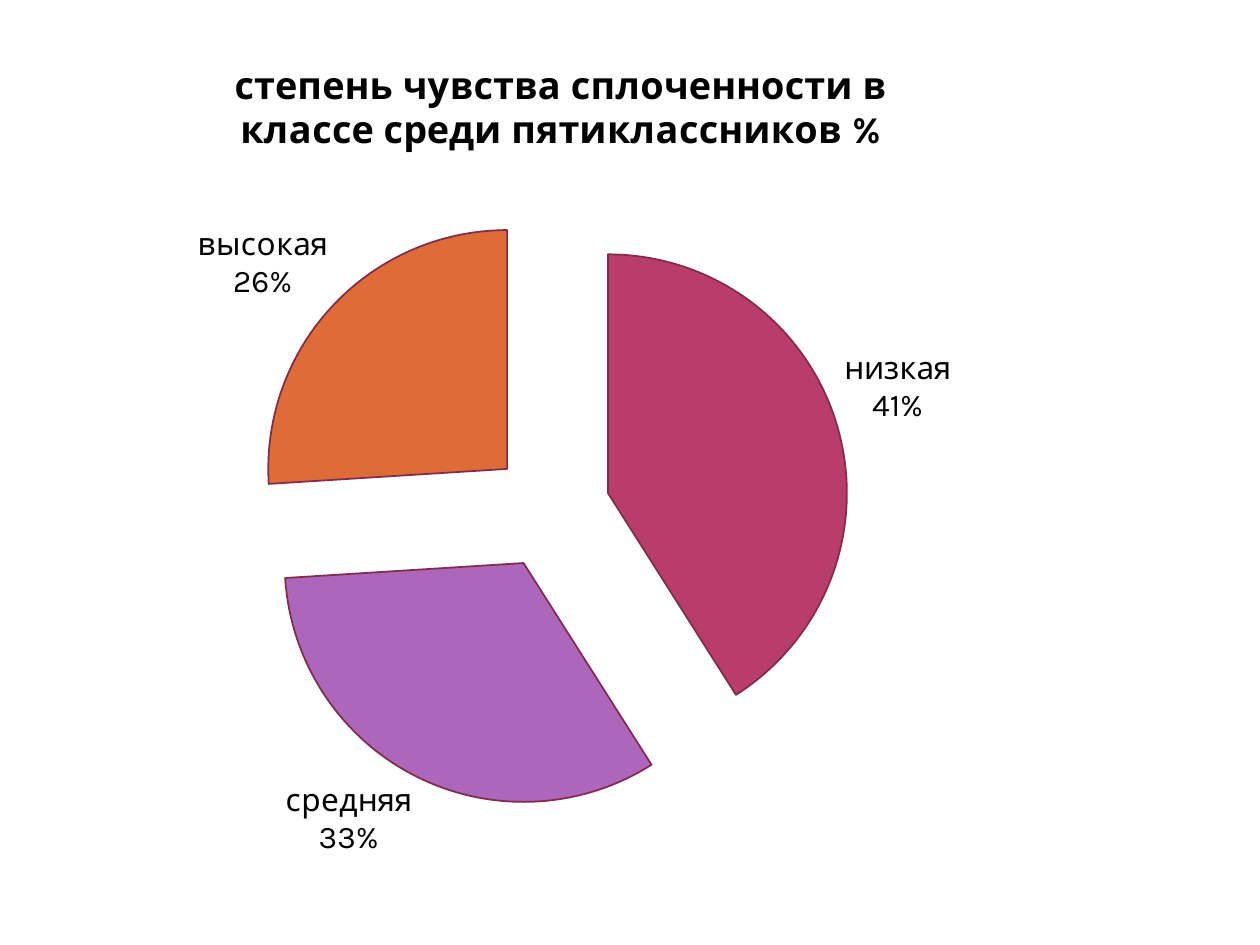
from lxml import etree
from pptx import Presentation
from pptx import util as u
from pptx.chart.data import CategoryChartData
from pptx.dml.color import RGBColor
from pptx.enum import chart as ch
from pptx.oxml.ns import qn

TITLE = "степень чувства сплоченности в классе среди пятиклассников %"
LEVELS = [("низкая", 41, "B83D68"), ("средняя", 33, "AC66BB"), ("высокая", 26, "DE6C36")]


def color(value):
    """Turn a hex string into a colour."""
    return RGBColor.from_string(value)


def element(tag, **attrs):
    """Make a chart XML element with the given attributes."""
    el = etree.Element(qn(tag))
    for name, value in attrs.items():
        el.set(name, str(value))
    return el


class Deck:
    """Hold the style and the current slide."""

    font, ink, edge = "Karla", "000000", "832B4B"
    label_size, title_size = 18, 21.6

    def __init__(self, width, height):
        """Start a presentation with one blank slide."""
        self.prs = Presentation()
        self.prs.slide_width, self.prs.slide_height = u.Inches(width), u.Inches(height)
        self.s = self.prs.slides.add_slide(self.prs.slide_layouts[6])

    def box(self, x, y, w, h):
        """Convert shares of the slide into lengths."""
        width, height = self.prs.slide_width, self.prs.slide_height
        return [u.Emu(int(n)) for n in (x * width, y * height, w * width, h * height)]

    def style(self, font, size, bold=False):
        """Apply the deck's typeface and ink."""
        font.name, font.size, font.bold = self.font, u.Pt(size), bold
        font.color.rgb = color(self.ink)

    def pie(self, area, title, levels, explosion, plot):
        """Add an exploded pie with category and percent labels."""
        data = CategoryChartData()
        data.categories = [name for name, _, _ in levels]
        data.add_series(title, [value for _, value, _ in levels])
        chart = self.s.shapes.add_chart(ch.XL_CHART_TYPE.PIE, *self.box(*area), data).chart
        self.style(chart.font, self.label_size)
        chart.has_legend = False
        self.heading(chart, title)
        pie = chart.plots[0]
        pie.vary_by_categories = True
        self.slices(pie.series[0], [fill for _, _, fill in levels], explosion)
        self.labels(pie)
        self.place(chart, plot)

    def heading(self, chart, title):
        """Set the chart title."""
        chart.has_title = True
        tf = chart.chart_title.text_frame
        tf.text = title
        self.style(tf.paragraphs[0].runs[0].font, self.title_size, True)
        chart.chart_title.include_in_layout = False

    def slices(self, series, fills, explosion):
        """Colour the slices and pull them apart."""
        for i, fill in enumerate(fills):
            fmt = series.points[i].format
            fmt.fill.solid()
            fmt.fill.fore_color.rgb = color(fill)
            fmt.line.color.rgb = color(self.edge)
            fmt.line.width = u.Pt(1)
        first = series._element.find(qn("c:dPt"))
        first.addprevious(element("c:explosion", val=explosion))

    def labels(self, pie):
        """Show category and percent outside each slice."""
        pie.has_data_labels = True
        labels = pie.data_labels
        labels.show_value = False
        labels.show_category_name = labels.show_percentage = True
        labels.number_format, labels.number_format_is_linked = "0%", False
        labels.position = ch.XL_LABEL_POSITION.OUTSIDE_END
        self.style(labels.font, self.label_size)
        separator = element("c:separator")
        separator.text = "\n"
        labels._element.find(qn("c:showBubbleSize")).addnext(separator)

    def place(self, chart, plot):
        """Fix the plot area as shares of the chart."""
        area = chart._chartSpace.chart.plotArea
        for old in area.findall(qn("c:layout")):
            area.remove(old)
        layout, manual = element("c:layout"), element("c:manualLayout")
        layout.append(manual)
        manual.append(element("c:layoutTarget", val="inner"))
        for tag in ("xMode", "yMode"):
            manual.append(element(f"c:{tag}", val="edge"))
        for tag, share in zip("xywh", plot):
            manual.append(element(f"c:{tag}", val=share))
        area.insert(0, layout)


def main():
    """Build the slide."""
    deck = Deck(10, 7.5)
    deck.pie((0.05, 0.03, 0.79, 0.91), TITLE, LEVELS, 25, (0.19, 0.21, 0.6, 0.7))
    deck.prs.save("out.pptx")


if __name__ == "__main__":
    main()
